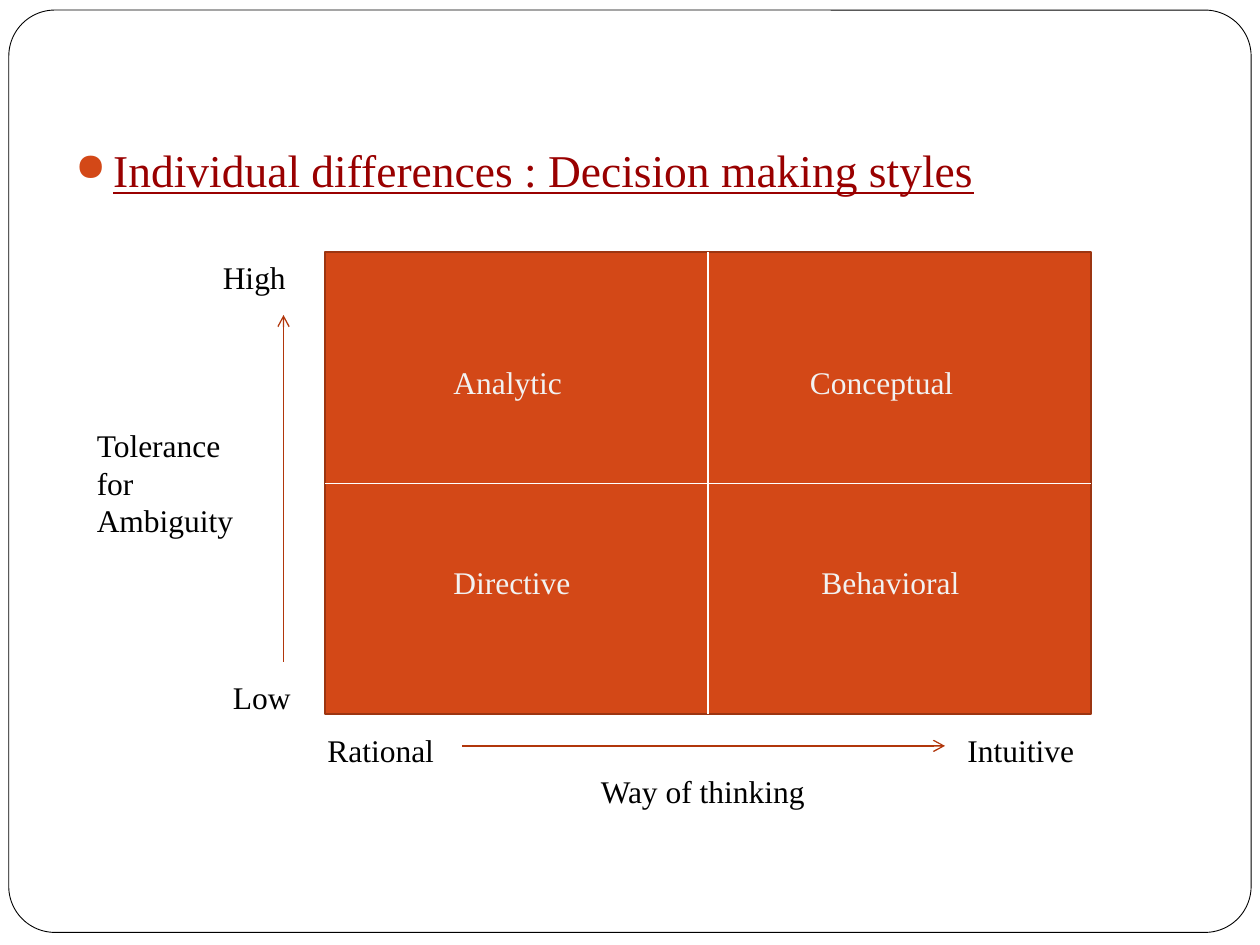
from lxml import etree
from pptx import Presentation
from pptx.dml.color import RGBColor
from pptx.enum import shapes, text
from pptx.oxml.ns import qn
from pptx.util import Inches, Pt

FONT = "Times New Roman"
BLACK, WHITE, PALE = "000000", "FFFFFF", "F2F2F2"
ORANGE, RUST, ARROW, TITLE = "D34817", "9C3511", "B1360B", "990000"


def rgb(value):
    return RGBColor.from_string(value)


def add_box(s, kind, box, fill, line, width):
    sp = s.shapes.add_shape(kind, *map(Inches, box))
    sp.shadow.inherit = False
    sp.fill.solid()
    sp.fill.fore_color.rgb = rgb(fill)
    sp.line.color.rgb = rgb(line)
    sp.line.width = Pt(width)
    return sp


def add_line(s, start, end, color, arrow=False):
    cn = s.shapes.add_connector(shapes.MSO_CONNECTOR.STRAIGHT, *map(Inches, start + end))
    cn.line.color.rgb = rgb(color)
    cn.line.width = Pt(0.75)
    if arrow:
        etree.SubElement(cn.line._get_or_add_ln(), qn("a:tailEnd"), type="arrow")
    etree.SubElement(cn._element.spPr, qn("a:effectLst"))


def add_text(s, box, lines, color, size=18, wrap=False, underline=None):
    tf = s.shapes.add_textbox(*map(Inches, box)).text_frame
    tf.word_wrap = wrap
    if not wrap:
        tf.auto_size = text.MSO_AUTO_SIZE.SHAPE_TO_FIT_TEXT
    for i, line in enumerate(lines):
        p = tf.paragraphs[0] if i == 0 else tf.add_paragraph()
        r = p.add_run()
        r.text = line
        for name, value in dict(name=FONT, size=Pt(size), underline=underline).items():
            setattr(r.font, name, value)
        r.font.color.rgb = rgb(color)
    return tf


def add_frame(s, box):
    sp = add_box(s, shapes.MSO_SHAPE.ROUNDED_RECTANGLE, box, WHITE, BLACK, 0.5)
    sp.adjustments[0] = 0.05


def add_heading(s, box):
    tf = add_text(s, box, ["Individual differences : Decision making styles"],
                  TITLE, size=26, wrap=True, underline=True)
    p = tf.paragraphs[0]
    p.space_before = Pt(5.8)
    pPr = p._p.get_or_add_pPr()
    pPr.set("marL", str(Inches(0.3)))
    pPr.set("indent", str(Inches(-0.3)))
    color = etree.SubElement(pPr, qn("a:buClr"))
    etree.SubElement(color, qn("a:srgbClr"), val=ORANGE)
    etree.SubElement(pPr, qn("a:buSzPct"), val="85000")
    etree.SubElement(pPr, qn("a:buChar"), char="●")


def add_matrix(s, box):
    x, y, w, h = box
    add_box(s, shapes.MSO_SHAPE.RECTANGLE, box, ORANGE, RUST, 1)
    add_line(s, (x + w / 2, y), (x + w / 2, y + h), WHITE)
    add_line(s, (x, y + h / 2), (x + w, y + h / 2), WHITE)
    for label, dx, dy, width in [
        ("Analytic", 0.92, 0.83, 1.11),
        ("Conceptual", 3.75, 0.83, 1.45),
        ("Directive", 0.92, 2.42, 1.19),
        ("Behavioral", 3.84, 2.42, 1.35),
    ]:
        add_text(s, (x + dx, y + dy, width, 0.4), [label], PALE)


def add_axes(s, box):
    """Label the left and bottom sides of the matrix that fills box."""
    x, y, w, h = box
    bottom = y + h
    for lines, dx, top, width in [
        (["Low"], -0.83, bottom - 0.34, 0.66),
        (["High"], -0.91, y, 0.74),
        (["Rational"], -0.08, bottom + 0.08, 1.12),
        (["Intuitive"], 5, bottom + 0.08, 1.14),
        (["Way of thinking"], 2.09, bottom + 0.41, 1.95),
        (["Tolerance", "for", "Ambiguity"], -1.91, y + 1.33, 1.36),
    ]:
        add_text(s, (x + dx, top, width, 0.4 if len(lines) == 1 else 1.01), lines, BLACK)
    add_line(s, (x - 0.33, bottom - 0.42), (x - 0.33, y + 0.5), ARROW, arrow=True)
    add_line(s, (x + 1.09, bottom + 0.25), (x + 4.92, bottom + 0.25), ARROW, arrow=True)


def main():
    prs = Presentation()
    prs.slide_width, prs.slide_height = Inches(10), Inches(7.5)
    s = prs.slides.add_slide(prs.slide_layouts[6])
    matrix = (2.58, 2, 6.08, 3.67)
    add_frame(s, (0.07, 0.08, 9.86, 7.32))
    add_heading(s, (0.5, 1.08, 9, 6.08))
    add_matrix(s, matrix)
    add_axes(s, matrix)
    prs.save("out.pptx")


if __name__ == "__main__":
    main()
